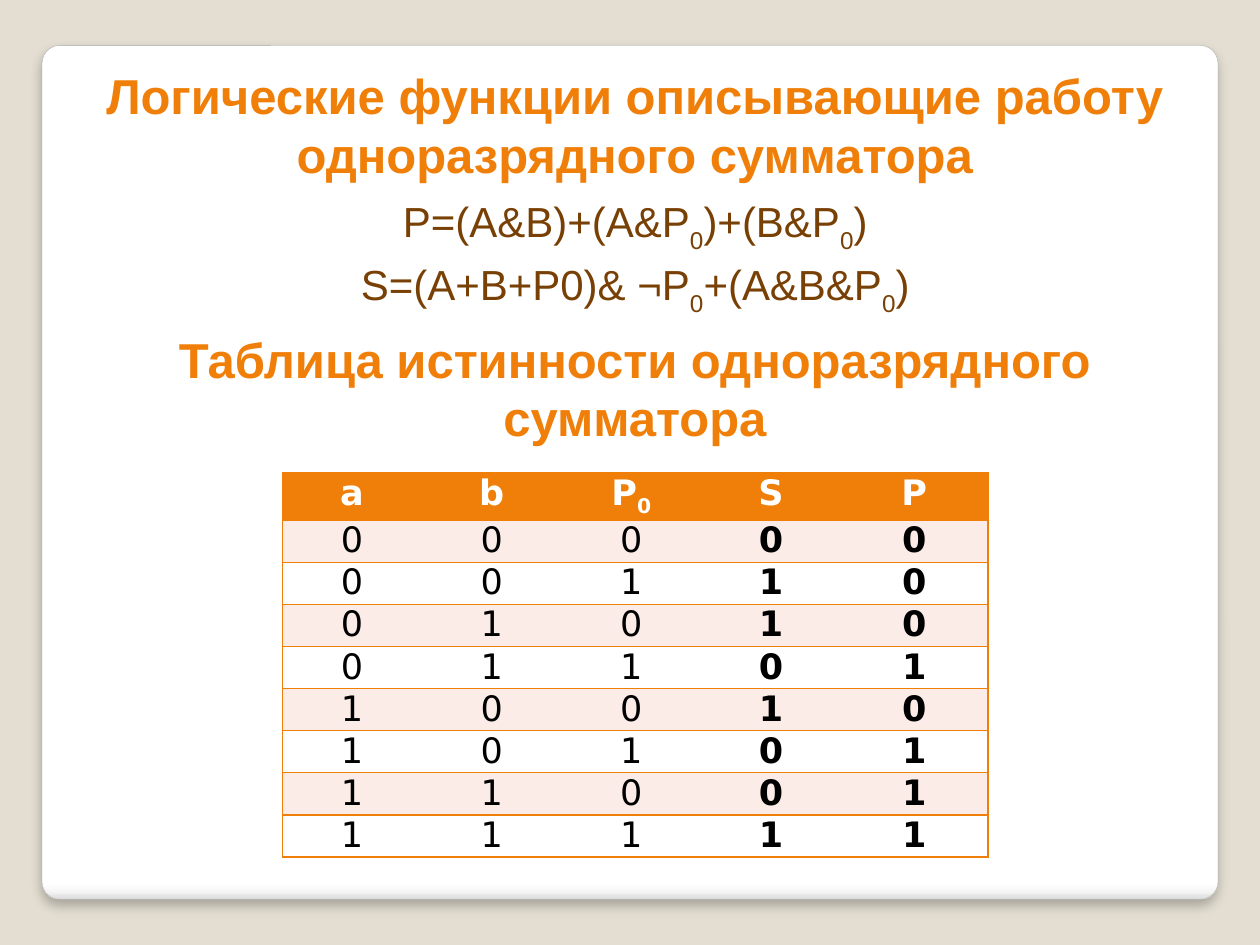
import itertools
import pptx
import pptx.util
import pptx.dml.color
import pptx.enum.shapes
import pptx.enum.text
import pptx.oxml
import pptx.oxml.ns

Pt = pptx.util.Pt
CENTER = pptx.enum.text.PP_ALIGN.CENTER
ANCHOR = pptx.enum.text.MSO_ANCHOR
NS = pptx.oxml.ns.nsdecls("a")
COLORS = {
    "back": "E3DED1", "card": "FFFFFF", "edge": "A4A4A4",
    "main": "F07F09", "brown": "784004", "band": "FCECE7",
    "white": "FFFFFF", "black": "000000",
}


def rgb(name):
    return pptx.dml.color.RGBColor.from_string(COLORS[name])


def style(para, size, color, bold=False, face="Arial"):
    para.alignment = CENTER
    font = para.font
    font.size, font.name, font.bold = Pt(size), face, bold
    font.color.rgb = rgb(color)


def write(para, text, drop):
    """Add text in which each underscore lowers the next character."""
    head, *rest = text.split("_")
    para.add_run().text = head
    for part in rest:
        low = para.add_run()
        low.text = part[0]
        low._r.get_or_add_rPr().set("baseline", str(-drop * 1000))
        if part[1:]:
            para.add_run().text = part[1:]


def place(shape, box):
    shape.left, shape.top, shape.width, shape.height = map(Pt, box)


def add_card(slide, box):
    card = slide.shapes.add_shape(
        pptx.enum.shapes.MSO_SHAPE.ROUNDED_RECTANGLE, *map(Pt, box))
    card.adjustments[0] = 0.021
    card.line.color.rgb = rgb("edge")
    card.line.width = Pt(0.16)
    # Soft shade along the lower edge
    stops = [(0, "FFFFFF"), (98, "FFFFFF"), (99, "F7F7F7"), (100, "DADADA")]
    marks = "".join(f'<a:gs pos="{pos * 1000}"><a:srgbClr val="{tone}"/></a:gs>'
                    for pos, tone in stops)
    fill = pptx.oxml.parse_xml(
        f'<a:gradFill {NS}><a:gsLst>{marks}</a:gsLst>'
        '<a:lin ang="5400000" scaled="0"/></a:gradFill>')
    props = card._element.spPr
    props.insert(2, fill)
    # Drop shadow
    props.append(pptx.oxml.parse_xml(
        f'<a:effectLst {NS}><a:outerShdw blurRad="{Pt(6)}" dist="{Pt(4)}" '
        'dir="5400000" algn="t" rotWithShape="0"><a:srgbClr val="000000">'
        '<a:alpha val="25000"/></a:srgbClr></a:outerShdw></a:effectLst>'))
    # Keep the card behind the title
    slide.shapes._spTree.insert(2, card._element)


def add_head(shape, box, text):
    place(shape, box)
    frame = shape.text_frame
    frame.word_wrap = True
    frame.auto_size = pptx.enum.text.MSO_AUTO_SIZE.NONE
    frame.vertical_anchor = ANCHOR.TOP
    frame.text = text
    style(frame.paragraphs[0], 28, "main", True)


def add_rules(slide, box, lines):
    frame = slide.shapes.add_textbox(*map(Pt, box)).text_frame
    frame.word_wrap = True
    frame.margin_top = frame.margin_bottom = 0
    for i, text in enumerate(lines):
        para = frame.add_paragraph() if i else frame.paragraphs[0]
        style(para, 24, "brown")
        para.space_before = Pt(2 if i else 0)
        write(para, text, 30)


def add_edges(cell, sides):
    props = cell._tc.get_or_add_tcPr()
    for i, side in enumerate(sides):
        props.insert(i, pptx.oxml.parse_xml(
            f'<a:ln{side} {NS} w="{Pt(1)}"><a:solidFill>'
            f'<a:srgbClr val="{COLORS["main"]}"/></a:solidFill></a:ln{side}>'))


def add_truth(slide, box):
    rows = [["a", "b", "P_0", "S", "P"]]
    for bits in itertools.product((0, 1), repeat=3):
        total = sum(bits)
        rows.append([str(n) for n in (*bits, total % 2, total // 2)])

    table = slide.shapes.add_table(len(rows), 5, *map(Pt, box)).table
    # Plain table style, without its own borders
    table._tbl.tblPr.find(pptx.oxml.ns.qn("a:tableStyleId")).text = (
        "{2D5ABB26-0587-4C30-8999-92F81FD0307C}")
    for col, width in zip(table.columns, [79.8] * 4 + [84]):
        col.width = Pt(width)
    for r, row in enumerate(rows):
        table.rows[r].height = Pt(23.3 if r else 26.3)
        for c, text in enumerate(row):
            cell = table.cell(r, c)
            cell.margin_left = cell.margin_right = Pt(5)
            cell.margin_top = cell.margin_bottom = 0
            cell.fill.solid()
            cell.fill.fore_color.rgb = rgb(
                "main" if r == 0 else "band" if r % 2 else "white")
            para = cell.text_frame.paragraphs[0]
            style(para, 20, "black" if r else "white",
                  r == 0 or c > 2, "DejaVu Sans")
            write(para, text, 25)
            add_edges(cell, "L" * (c == 0) + "R" * (c == 4) + "TB")


def main():
    prs = pptx.Presentation()
    prs.slide_width, prs.slide_height = Pt(720), Pt(540)
    slide = prs.slides.add_slide(prs.slide_layouts[5])
    slide.background.fill.solid()
    slide.background.fill.fore_color.rgb = rgb("back")

    add_card(slide, (24, 26, 672, 488))
    add_head(slide.shapes.title, (48, 34, 629.5, 75),
             "Логические функции описывающие работу одноразрядного сумматора")
    add_rules(slide, (183, 111.5, 360, 70),
              ["P=(A&B)+(A&P_0)+(B&P_0)", "S=(A+B+P0)& ¬P_0+(A&B&P_0)"])
    add_head(slide.shapes.add_textbox(0, 0, 0, 0), (36.5, 184.5, 652.5, 75),
             "Таблица истинности одноразрядного сумматора")
    add_truth(slide, (161.3, 270, 403.2, 212.7))
    prs.save("out.pptx")


if __name__ == "__main__":
    main()
